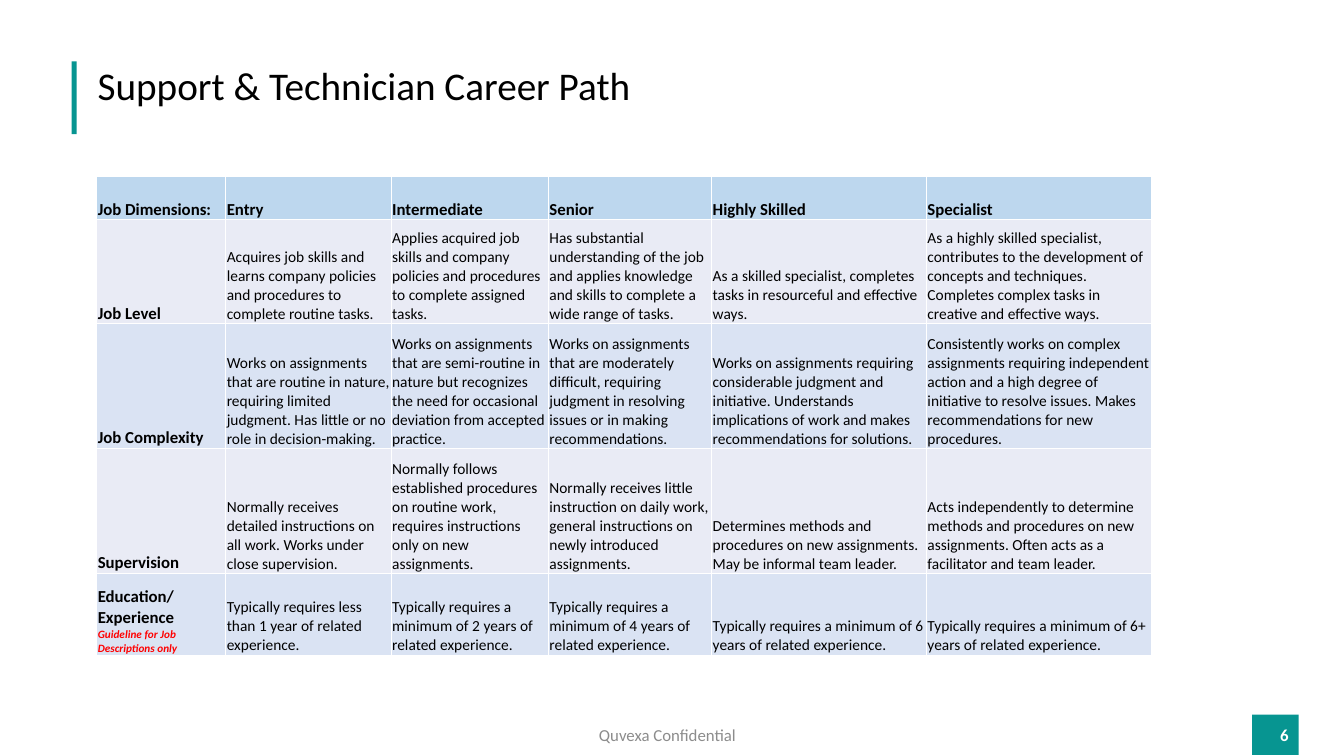
from lxml import etree
from pptx import Presentation
from pptx.dml.color import RGBColor
from pptx.enum.shapes import MSO_SHAPE
from pptx.enum.text import MSO_ANCHOR, PP_ALIGN
from pptx.oxml.ns import qn
from pptx.util import Inches, Pt

RECT = MSO_SHAPE.RECTANGLE
TOP, MID, LOW = MSO_ANCHOR.TOP, MSO_ANCHOR.MIDDLE, MSO_ANCHOR.BOTTOM
LEFT, MIDST, RIGHT = PP_ALIGN.LEFT, PP_ALIGN.CENTER, PP_ALIGN.RIGHT

TEAL = RGBColor(0x07, 0x95, 0x91)
BLUE = RGBColor(0xBD, 0xD7, 0xEE)
PALE = RGBColor(0xE9, 0xEB, 0xF5)
SKY = RGBColor(0xDA, 0xE3, 0xF3)
BLACK = RGBColor(0, 0, 0)
WHITE = RGBColor(0xFF, 0xFF, 0xFF)
GREY = RGBColor(0x8C, 0x8C, 0x8C)
RED = RGBColor(0xFF, 0, 0)

COLS = [1.28, 1.64, 1.56, 1.62, 2.13, 2.23]
ROWS = [0.43, 1.03, 1.24, 1.24, 0.81]
FILLS = [BLUE, PALE, SKY, PALE, SKY]
NOTE = "Guideline for Job Descriptions only"
GRID = [
    ["Job Dimensions:", "Entry", "Intermediate", "Senior", "Highly Skilled", "Specialist"],
    ["Job Level",
     "Acquires job skills and learns company policies and procedures to complete routine tasks.",
     "Applies acquired job skills and company policies and procedures to complete assigned tasks.",
     "Has substantial understanding of the job and applies knowledge and skills to complete "
     "a wide range of tasks.",
     "As a skilled specialist, completes tasks in resourceful and effective ways.",
     "As a highly skilled specialist, contributes to the development of concepts and techniques. "
     "Completes complex tasks in creative and effective ways."],
    ["Job Complexity",
     "Works on assignments that are routine in nature, requiring limited judgment. "
     "Has little or no role in decision-making.",
     "Works on assignments that are semi-routine in nature but recognizes the need for "
     "occasional deviation from accepted practice.",
     "Works on assignments that are moderately difficult, requiring judgment in resolving "
     "issues or in making recommendations.",
     "Works on assignments requiring considerable judgment and initiative. "
     "Understands implications of work and makes recommendations for solutions.",
     "Consistently works on complex assignments requiring independent action and a high degree "
     "of initiative to resolve issues. Makes recommendations for new procedures."],
    ["Supervision",
     "Normally receives detailed instructions on all work. Works under close supervision.",
     "Normally follows established procedures on routine work, requires instructions only "
     "on new assignments.",
     "Normally receives little instruction on daily work, general instructions on newly "
     "introduced assignments.",
     "Determines methods and procedures on new assignments. May be informal team leader.",
     "Acts independently to determine methods and procedures on new assignments. "
     "Often acts as a facilitator and team leader."],
    ["Education/\nExperience",
     "Typically requires less than 1 year of related experience."]
    + [f"Typically requires a minimum of {years} years of related experience."
       for years in ("2", "4", "6", "6+")],
]


def write(frame, text, size=12, color=BLACK, bold=False, italic=False,
          align=LEFT, space=None, more=False):
    frame.word_wrap = True
    for i, line in enumerate(text.split("\n")):
        para = frame.add_paragraph() if more or i else frame.paragraphs[0]
        para.alignment = align
        para.line_spacing = space
        run = para.add_run()
        run.text = line
        font = run.font
        font.name, font.size, font.color.rgb = "Calibri", Pt(size), color
        font.bold, font.italic = bold, italic


def edge(cell):
    props = cell._tc.get_or_add_tcPr()
    for i, side in enumerate(("lnL", "lnR", "lnT", "lnB")):
        line = etree.Element(qn(f"a:{side}"), w=str(Pt(1)))
        fill = etree.SubElement(line, qn("a:solidFill"))
        etree.SubElement(fill, qn("a:srgbClr"), val=str(WHITE))
        props.insert(i, line)


deck = Presentation()
deck.slide_width, deck.slide_height = Inches(13.33), Inches(7.5)
slide = deck.slides.add_slide(deck.slide_layouts[6])
shapes = slide.shapes

blocks = []
for x, y, w, h in [(0.71, 0.61, 0.05, 0.72), (12.42, 7.09, 0.46, 0.4)]:
    block = shapes.add_shape(RECT, Inches(x), Inches(y), Inches(w), Inches(h))
    block.shadow.inherit = False
    block.fill.solid()
    block.fill.fore_color.rgb = TEAL
    block.line.fill.background()
    blocks.append(block)
page = blocks[1].text_frame
page.vertical_anchor = MID
write(page, "6", color=WHITE, bold=True, align=RIGHT)

title = shapes.add_textbox(Inches(0.87), Inches(0.61), Inches(11.5), Inches(0.54))
title.text_frame.vertical_anchor = TOP
write(title.text_frame, "Support & Technician Career Path", size=28, space=0.9)

foot = shapes.add_textbox(Inches(4.37), Inches(7.09), Inches(4.5), Inches(0.4))
foot.text_frame.vertical_anchor = MID
write(foot.text_frame, "Quvexa Confidential", color=GREY, align=MIDST)

table = shapes.add_table(len(ROWS), len(COLS), Inches(0.96), Inches(1.75),
                         Inches(sum(COLS)), Inches(sum(ROWS))).table
for col, width in zip(table.columns, COLS):
    col.width = Inches(width)
for r, (height, fill, texts) in enumerate(zip(ROWS, FILLS, GRID)):
    table.rows[r].height = Inches(height)
    for c, text in enumerate(texts):
        cell = table.cell(r, c)
        cell.fill.solid()
        cell.fill.fore_color.rgb = fill
        cell.vertical_anchor = LOW
        cell.margin_left = cell.margin_right = cell.margin_top = Inches(0.01)
        cell.margin_bottom = 0
        edge(cell)
        head = r == 0 or c == 0
        write(cell.text_frame, text, size=12 if head else 11, bold=head)
write(table.cell(len(ROWS) - 1, 0).text_frame, NOTE, size=8, color=RED,
      bold=True, italic=True, more=True)

deck.save("out.pptx")
